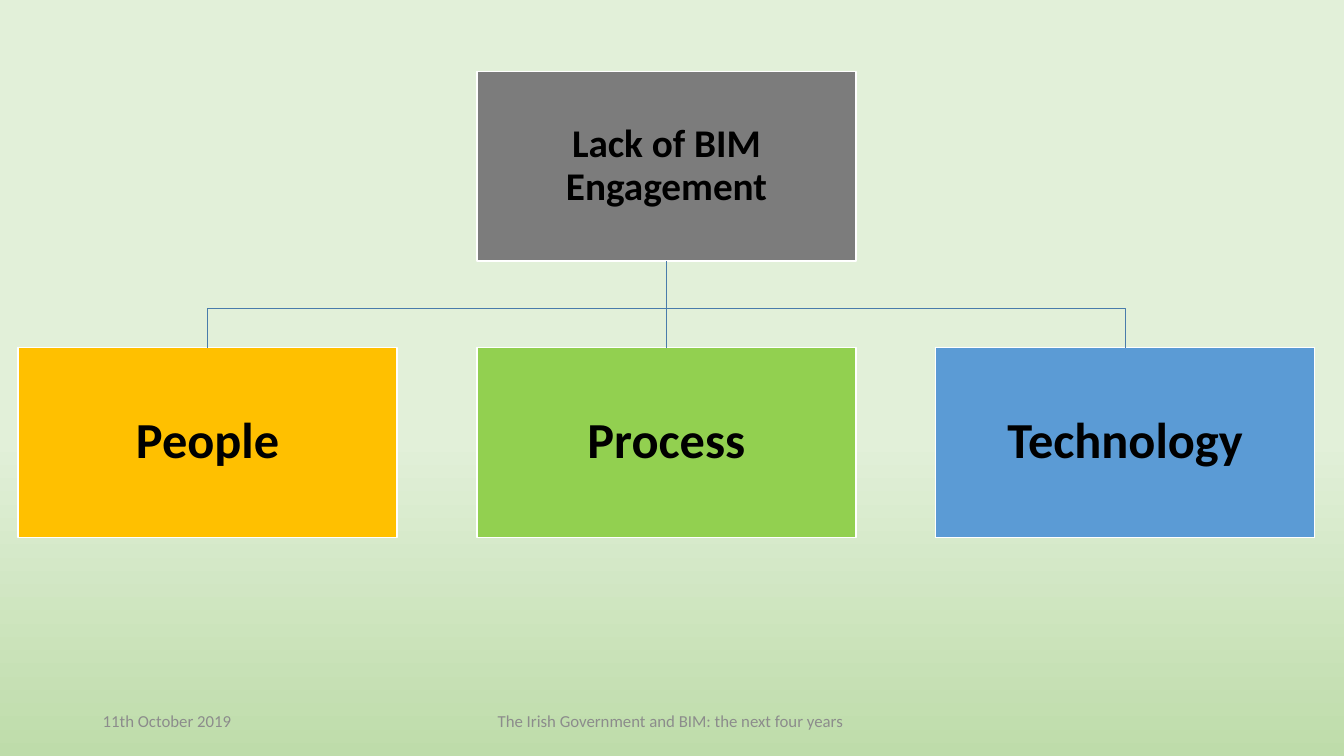
from dataclasses import dataclass

import pptx
import pptx.dml.color
import pptx.enum.shapes
import pptx.enum.text
import pptx.oxml.ns
import pptx.shapes.autoshape
import pptx.slide
import pptx.util
from lxml import etree

Inches = pptx.util.Inches
Align = pptx.enum.text.PP_ALIGN


@dataclass(frozen=True)
class Theme:
    font: str = "Calibri"
    sky: str = "E2F0D9"
    ground: str = "BEDCAA"
    link: str = "497CAB"
    border: str = "FFFFFF"
    ink: str = "000000"
    footer_ink: str = "8C8C8C"
    cause: str = "7C7C7C"
    people: str = "FFC000"
    process: str = "92D050"
    technology: str = "5B9BD5"
    cause_size: int = 28
    factor_size: int = 36
    footer_size: int = 12
    line_width: int = 1


@dataclass(frozen=True)
class Grid:
    """Columns and rows of the hierarchy, in inches."""
    left: float = 0.18
    top: float = 0.71
    box_width: float = 3.76
    box_height: float = 1.88
    column_pitch: float = 4.55
    row_pitch: float = 2.74
    branch_y: float = 3.06

    def x(self, column: int) -> float:
        return self.left + column * self.column_pitch

    def y(self, row: int) -> float:
        return self.top + row * self.row_pitch


@dataclass(frozen=True)
class Node:
    label: str
    column: int
    row: int
    fill: str
    size: int
    inset: float


@dataclass(frozen=True)
class FooterItem:
    text: str
    left: float
    width: float
    align: Align


THEME = Theme()
GRID = Grid()
CAUSE = Node("Lack of BIM Engagement", 1, 0, THEME.cause, THEME.cause_size, 0.02)
FACTORS = [
    Node(label, column, 1, fill, THEME.factor_size, 0.03)
    for column, (label, fill) in enumerate([
        ("People", THEME.people),
        ("Process", THEME.process),
        ("Technology", THEME.technology),
    ])
]
FOOTER = [
    FooterItem("11th October 2019", 0.92, 3, Align.LEFT),
    FooterItem("The Irish Government and BIM: the next four years ", 4.42, 4.5, Align.CENTER),
]


def rgb(code: str) -> pptx.dml.color.RGBColor:
    return pptx.dml.color.RGBColor.from_string(code)


def paint_background(slide: pptx.slide.Slide) -> None:
    fill = slide.background.fill
    fill.gradient()
    fill.gradient_angle = 270
    stops = [(0.58, THEME.sky), (1, THEME.ground)]
    for stop, (position, color) in zip(fill.gradient_stops, stops):
        stop.position = position
        stop.color.rgb = rgb(color)


def write(shape: pptx.shapes.autoshape.Shape, text: str, size: int, color: str,
          align: Align, bold: bool = False) -> None:
    frame = shape.text_frame
    frame.text = text
    frame.word_wrap = True
    frame.vertical_anchor = pptx.enum.text.MSO_ANCHOR.MIDDLE
    paragraph = frame.paragraphs[0]
    paragraph.alignment = align
    font = paragraph.runs[0].font
    font.name, font.size, font.bold = THEME.font, pptx.util.Pt(size), bold
    font.color.rgb = rgb(color)


def draw_node(slide: pptx.slide.Slide, node: Node) -> pptx.shapes.autoshape.Shape:
    box = slide.shapes.add_shape(
        pptx.enum.shapes.MSO_SHAPE.RECTANGLE,
        Inches(GRID.x(node.column)), Inches(GRID.y(node.row)),
        Inches(GRID.box_width), Inches(GRID.box_height))
    box.shadow.inherit = False
    box.fill.solid()
    box.fill.fore_color.rgb = rgb(node.fill)
    box.line.color.rgb = rgb(THEME.border)
    box.line.width = pptx.util.Pt(THEME.line_width)
    write(box, node.label, node.size, THEME.ink, Align.CENTER, bold=True)
    frame = box.text_frame
    frame.paragraphs[0].line_spacing = 0.9
    frame.margin_left = frame.margin_right = Inches(node.inset)
    frame.margin_top = frame.margin_bottom = Inches(node.inset)
    return box


def draw_link(slide: pptx.slide.Slide, cause: pptx.shapes.autoshape.Shape,
              factor: pptx.shapes.autoshape.Shape) -> None:
    """Join cause to factor: straight when aligned, otherwise bent at the branch."""
    start_x, start_y = cause.left + cause.width // 2, cause.top + cause.height
    end_x, end_y = factor.left + factor.width // 2, factor.top
    if cause.left == factor.left:
        link = slide.shapes.add_connector(
            pptx.enum.shapes.MSO_CONNECTOR.STRAIGHT, start_x, start_y, end_x, end_y)
        link.begin_connect(cause, 2)
        link.end_connect(factor, 0)
        properties = link._element.spPr
        etree.SubElement(properties, pptx.oxml.ns.qn("a:effectLst"))
    else:
        branch_y = Inches(GRID.branch_y)
        builder = slide.shapes.build_freeform(start_x, start_y)
        builder.add_line_segments(
            [(start_x, branch_y), (end_x, branch_y), (end_x, end_y)], close=False)
        link = builder.convert_to_shape()
        link.shadow.inherit = False
        link.fill.background()
    link.line.color.rgb = rgb(THEME.link)
    link.line.width = pptx.util.Pt(THEME.line_width)


def draw_footer(slide: pptx.slide.Slide, item: FooterItem) -> None:
    box = slide.shapes.add_textbox(
        Inches(item.left), Inches(6.95), Inches(item.width), Inches(0.4))
    write(box, item.text, THEME.footer_size, THEME.footer_ink, item.align)


def main() -> None:
    deck = pptx.Presentation()
    deck.slide_width, deck.slide_height = Inches(13.33), Inches(7.5)
    slide = deck.slides.add_slide(deck.slide_layouts[6])
    paint_background(slide)
    for item in FOOTER:
        draw_footer(slide, item)
    cause = draw_node(slide, CAUSE)
    for node in FACTORS:
        draw_link(slide, cause, draw_node(slide, node))
    deck.save("out.pptx")


if __name__ == "__main__":
    main()
